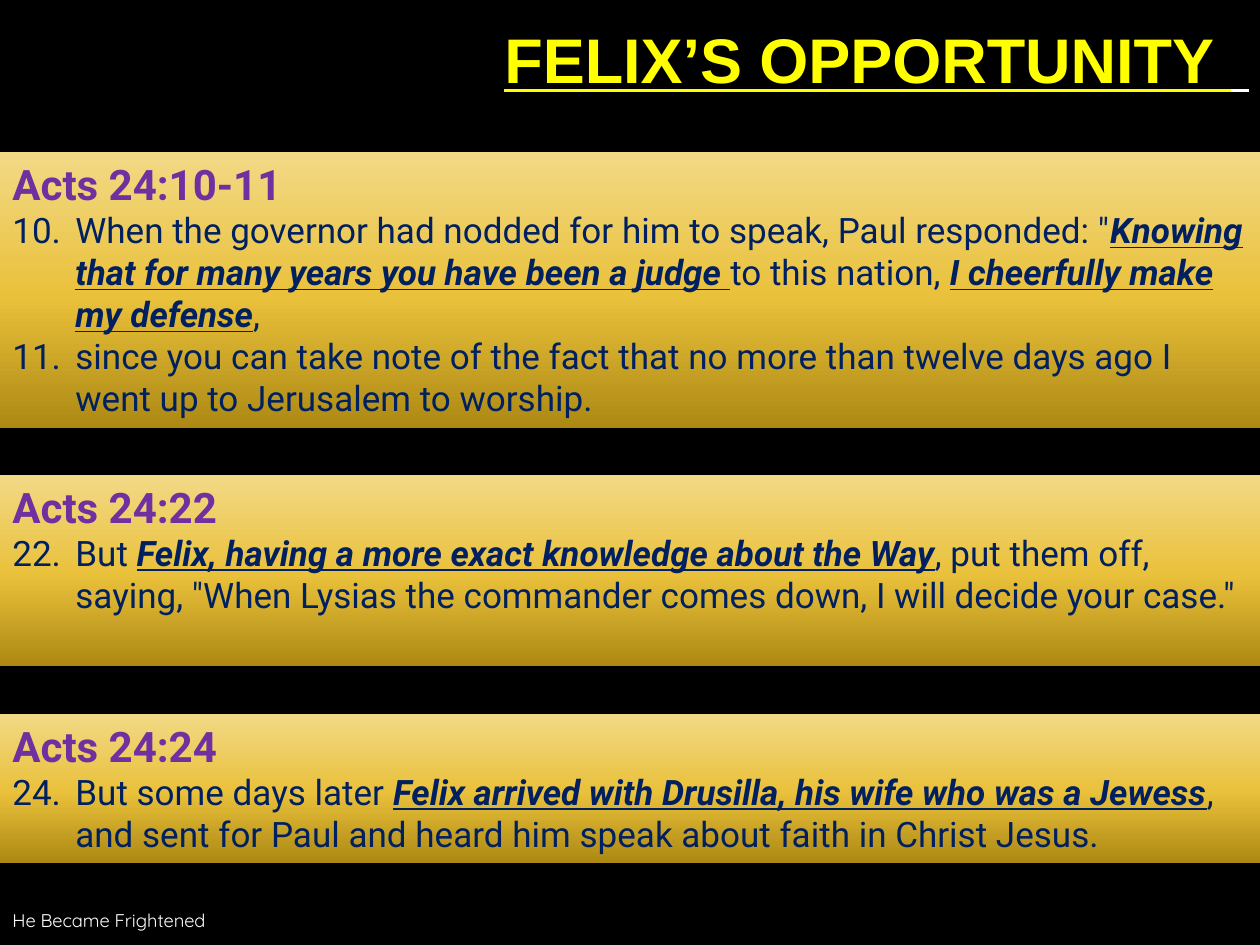
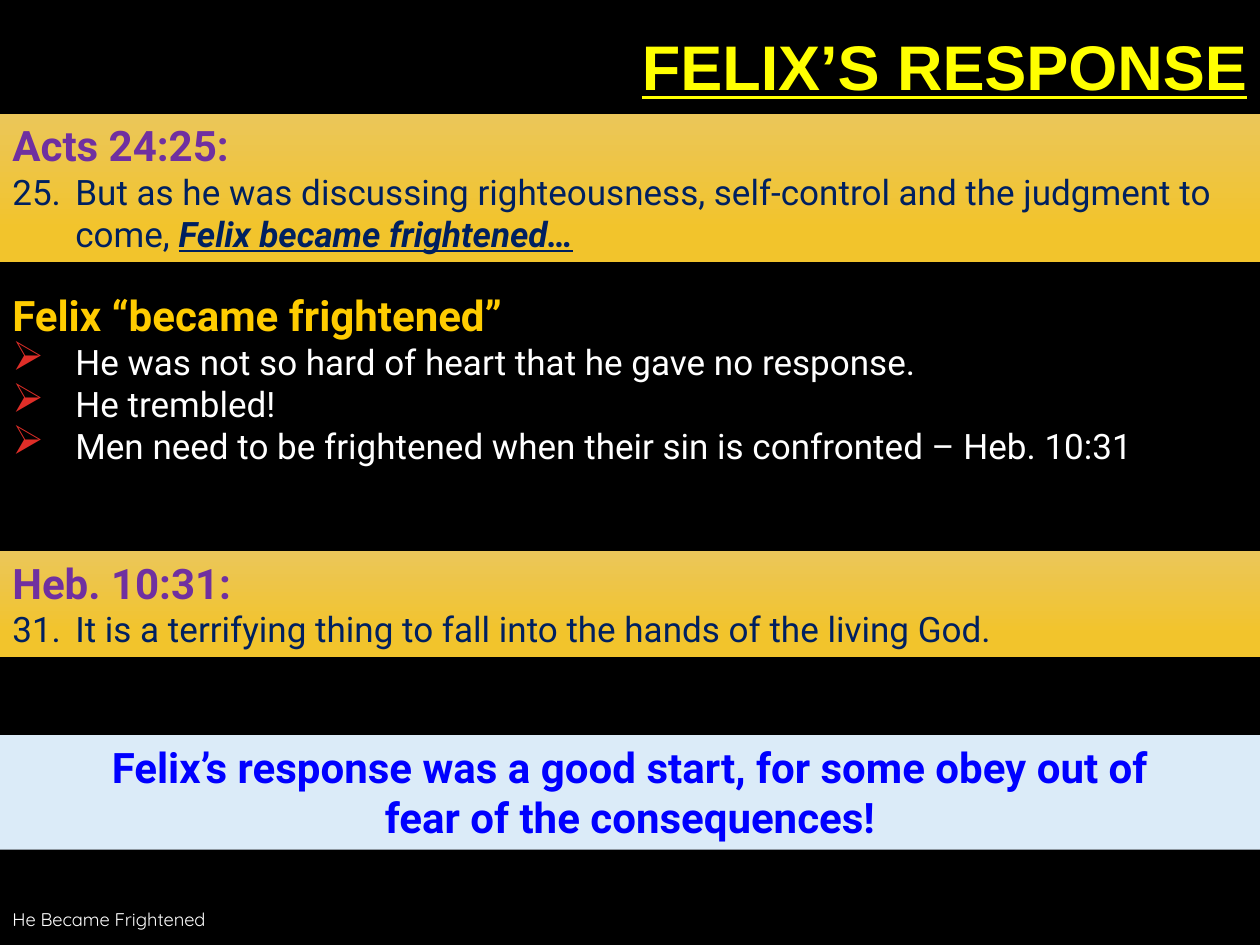
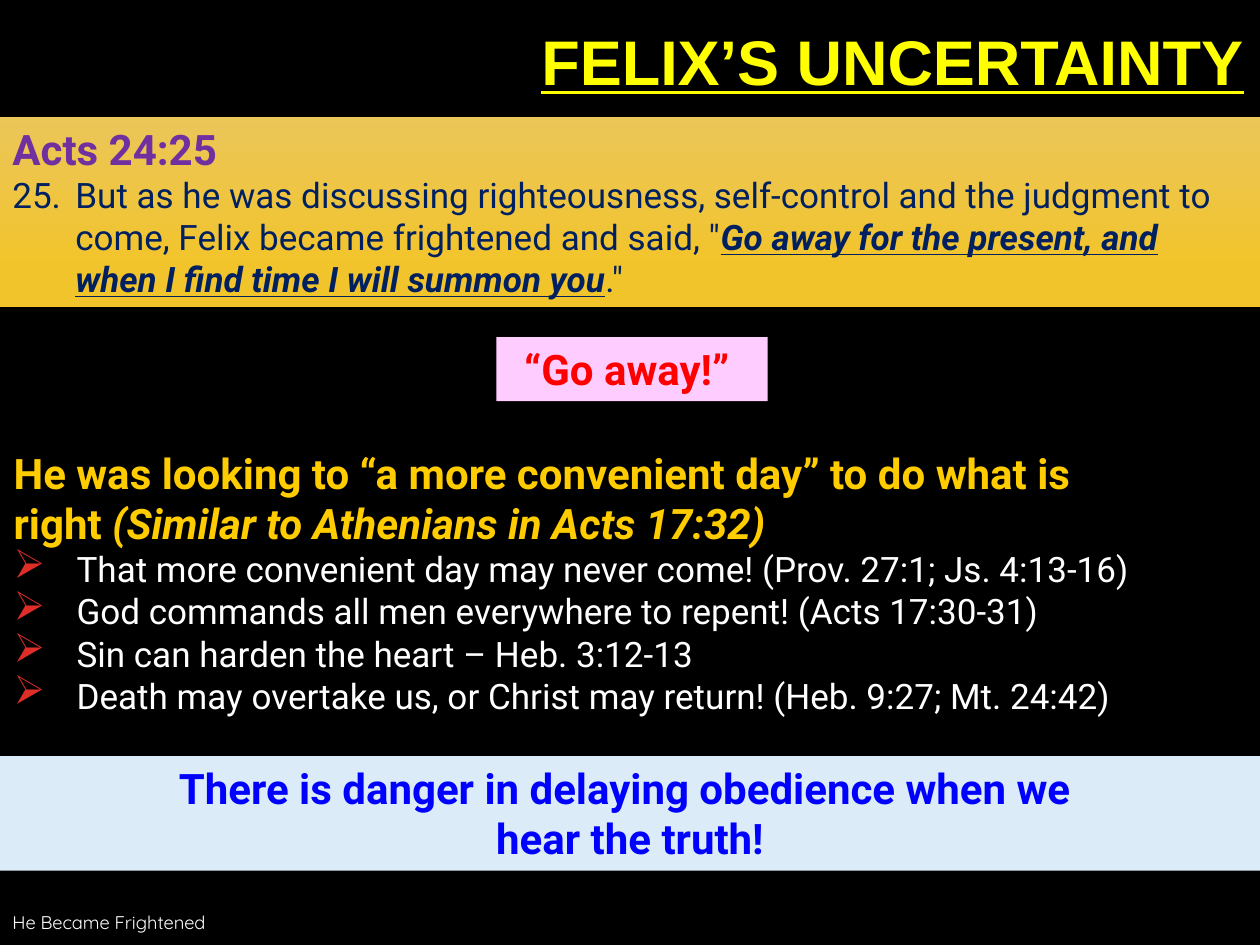
from lxml import etree
from pptx import Presentation
from pptx.dml.color import RGBColor
from pptx.enum import shapes, text
from pptx.oxml.ns import qn
from pptx.util import Pt

BLACK = RGBColor(0x00, 0x00, 0x00)
WHITE = RGBColor(0xFF, 0xFF, 0xFF)
YELLOW = RGBColor(0xFF, 0xFF, 0x00)
AMBER = RGBColor(0xFF, 0xCC, 0x00)
PURPLE = RGBColor(0x70, 0x30, 0xA0)
NAVY = RGBColor(0x00, 0x20, 0x60)
BLUE = RGBColor(0x00, 0x00, 0xFF)
RED = RGBColor(0xFF, 0x00, 0x00)
BULLET_RED = RGBColor(0xDF, 0x2E, 0x28)
PALE_BLUE = RGBColor(0xDB, 0xEB, 0xF8)
PINK = RGBColor(0xFF, 0xCC, 0xFF)

# Gradient stops run from top to bottom: (percent, colour)
DEEP_GOLD = [(0, RGBColor(0xF2, 0xD9, 0x86)), (52, RGBColor(0xEA, 0xC1, 0x3B)),
             (100, RGBColor(0xAD, 0x89, 0x13))]
LIGHT_GOLD = [(0, RGBColor(0xEB, 0xC6, 0x59)), (78, RGBColor(0xF2, 0xC4, 0x2C))]

SLIDE_W, SLIDE_H = 720, 540
HANGING = 36
FOOTER = "He Became Frightened"

STYLES = {
    "title": dict(name="Arial", size=Pt(36), bold=True, underline=True, color=YELLOW),
    "footer": dict(name="Quicksand", size=Pt(10.5), color=WHITE),
    "passage": dict(name="Roboto", size=Pt(24), bold=True, color=PURPLE),
    "verse": dict(name="Roboto", size=Pt(20), color=NAVY),
    "heading": dict(name="Roboto", size=Pt(24), bold=True, color=AMBER),
    "point": dict(name="Roboto", size=Pt(20), color=WHITE),
    "lesson": dict(name="Roboto", size=Pt(24), bold=True, color=BLUE),
    "cry": dict(name="Roboto", size=Pt(24), bold=True, color=RED),
}
# Added to the text between asterisks
EMPHASIS = {
    "verse": dict(bold=True, italic=True, underline=True),
    "heading": dict(italic=True),
    "title": dict(color=WHITE),
}
CENTRED = ("lesson", "cry")

# Each part: fill, (left, top, width, height), paragraphs as (style, text)
SLIDES = [
    dict(title="FELIX’S OPPORTUNITY * *", title_at=(0.72, 18), footer_top=512, parts=[
        (DEEP_GOLD, (0, 87, 720, 157.7), [
            ("passage", "Acts 24:10-11"),
            ("verse", "10.\tWhen the governor had nodded for him to speak, Paul responded: "
                      "\"*Knowing that for many years you have been a judge *to this nation, "
                      "*I cheerfully make my defense*,"),
            ("verse", "11.\tsince you can take note of the fact that no more than twelve "
                      "days ago I went up to Jerusalem to worship.")]),
        (DEEP_GOLD, (0, 271.5, 720, 109), [
            ("passage", "Acts 24:22"),
            ("verse", "22.\tBut *Felix, having a more exact knowledge about the Way*, put "
                      "them off, saying, \"When Lysias the commander comes down, I will "
                      "decide your case.\"")]),
        (DEEP_GOLD, (0, 408, 720, 85), [
            ("passage", "Acts 24:24"),
            ("verse", "24.\tBut some days later *Felix arrived with Drusilla, his wife who "
                      "was a Jewess*, and sent for Paul and heard him speak about faith in "
                      "Christ Jesus.")]),
    ]),
    dict(title="FELIX’S RESPONSE", title_at=(0, 22.3), footer_top=511.5, parts=[
        (LIGHT_GOLD, (0, 65, 720, 85), [
            ("passage", "Acts 24:25:"),
            ("verse", "25.\tBut as he was discussing righteousness, self-control and the "
                      "judgment to come, *Felix became frightened…*")]),
        (None, (0, 162, 720, 109), [
            ("heading", "Felix “became frightened”"),
            ("point", "He was not so hard of heart that he gave no response."),
            ("point", "He trembled!"),
            ("point", "Men need to be frightened when their sin is confronted – Heb. 10:31")]),
        (LIGHT_GOLD, (0, 315, 720, 60.5), [
            ("passage", "Heb. 10:31:"),
            ("verse", "31.\tIt is a terrifying thing to fall into the hands of the living "
                      "God.")]),
        (PALE_BLUE, (0, 420, 720, 65.5), [
            ("lesson", "Felix’s response was a good start, for some obey out of"),
            ("lesson", "fear of the consequences!")]),
    ]),
    dict(title="FELIX’S UNCERTAINTY", title_at=(-2.16, 19.4), footer_top=513, parts=[
        (LIGHT_GOLD, (0, 67, 720, 108.7), [
            ("passage", "Acts 24:25"),
            ("verse", "25.\tBut as he was discussing righteousness, self-control and the "
                      "judgment to come, Felix became frightened and said, \"*Go away for "
                      "the present, and when I find time I will summon you*.\"")]),
        (PINK, (283.7, 192.7, 155, 36.5), [("cry", "“Go away!” ")]),
        (None, (0.72, 252, 720, 162.7), [
            ("heading", "He was looking to “a more convenient day” to do what is"),
            ("heading", "right *(Similar to Athenians in Acts 17:32)*"),
            ("point", "That more convenient day may never come! (Prov. 27:1; Js. 4:13-16)"),
            ("point", "God commands all men everywhere to repent! (Acts 17:30-31)"),
            ("point", "Sin can harden the heart – Heb. 3:12-13"),
            ("point", "Death may overtake us, or Christ may return! (Heb. 9:27; Mt. 24:42)")]),
        (PALE_BLUE, (0, 432, 720, 65.5), [
            ("lesson", "There is danger in delaying obedience when we "),
            ("lesson", "hear the truth!")]),
    ]),
]


def add_runs(paragraph, style, words):
    """Write words, emphasising what stands between asterisks."""
    for i, piece in enumerate(words.split("*")):
        if not piece:
            continue
        run = paragraph.add_run()
        run.text = piece
        look = STYLES[style] | (EMPHASIS[style] if i % 2 else {})
        for key, value in look.items():
            if key == "color":
                run.font.color.rgb = value
            else:
                setattr(run.font, key, value)


def hang(paragraph, bulleted):
    """Give a hanging indent, with a red arrow bullet if asked."""
    props = paragraph._p.get_or_add_pPr()
    props.set("marL", str(Pt(HANGING)))
    props.set("indent", str(-Pt(HANGING)))
    if bulleted:
        colour = etree.SubElement(props, qn("a:buClr"))
        etree.SubElement(colour, qn("a:srgbClr"), val=str(BULLET_RED))
        etree.SubElement(props, qn("a:buSzPct"), val="115000")
        etree.SubElement(props, qn("a:buChar"), char="➢")


def fill_gradient(shape, stops):
    shape.fill.gradient()
    shape.fill.gradient_angle = 270
    stop_list = shape._element.spPr.find(".//" + qn("a:gsLst"))
    for old in list(stop_list):
        stop_list.remove(old)
    for percent, colour in stops:
        stop = etree.SubElement(stop_list, qn("a:gs"), pos=str(percent * 1000))
        etree.SubElement(stop, qn("a:srgbClr"), val=str(colour))


def add_line(slide, style, words, box):
    """Add a one-line text box, centred on its height."""
    frame = slide.shapes.add_textbox(*map(Pt, box)).text_frame
    frame.word_wrap = True
    frame.vertical_anchor = text.MSO_ANCHOR.MIDDLE
    paragraph = frame.paragraphs[0]
    add_runs(paragraph, style, words)
    return paragraph


def add_part(slide, fill, box, paragraphs):
    place = [Pt(length) for length in box]
    if fill is None:
        part = slide.shapes.add_textbox(*place)
    else:
        part = slide.shapes.add_shape(shapes.MSO_SHAPE.RECTANGLE, *place)
        part.shadow.inherit = False
        part.line.fill.background()
        if isinstance(fill, list):
            fill_gradient(part, fill)
        else:
            part.fill.solid()
            part.fill.fore_color.rgb = fill
    frame = part.text_frame
    frame.word_wrap = True
    frame.auto_size = text.MSO_AUTO_SIZE.SHAPE_TO_FIT_TEXT
    frame.vertical_anchor = text.MSO_ANCHOR.TOP
    for i, (style, words) in enumerate(paragraphs):
        paragraph = frame.add_paragraph() if i else frame.paragraphs[0]
        paragraph.alignment = text.PP_ALIGN.CENTER if style in CENTRED else text.PP_ALIGN.LEFT
        hang(paragraph, style == "point")
        add_runs(paragraph, style, words)


def main():
    deck = Presentation()
    deck.slide_width, deck.slide_height = Pt(SLIDE_W), Pt(SLIDE_H)
    for content in SLIDES:
        slide = deck.slides.add_slide(deck.slide_layouts[6])
        slide.background.fill.solid()
        slide.background.fill.fore_color.rgb = BLACK
        title = add_line(slide, "title", content["title"], (*content["title_at"], SLIDE_W, 36))
        title.alignment = text.PP_ALIGN.RIGHT
        title.line_spacing = 0.9
        add_line(slide, "footer", FOOTER, (0, content["footer_top"], 447, 28))
        for part in content["parts"]:
            add_part(slide, *part)
    deck.save("out.pptx")


if __name__ == "__main__":
    main()
